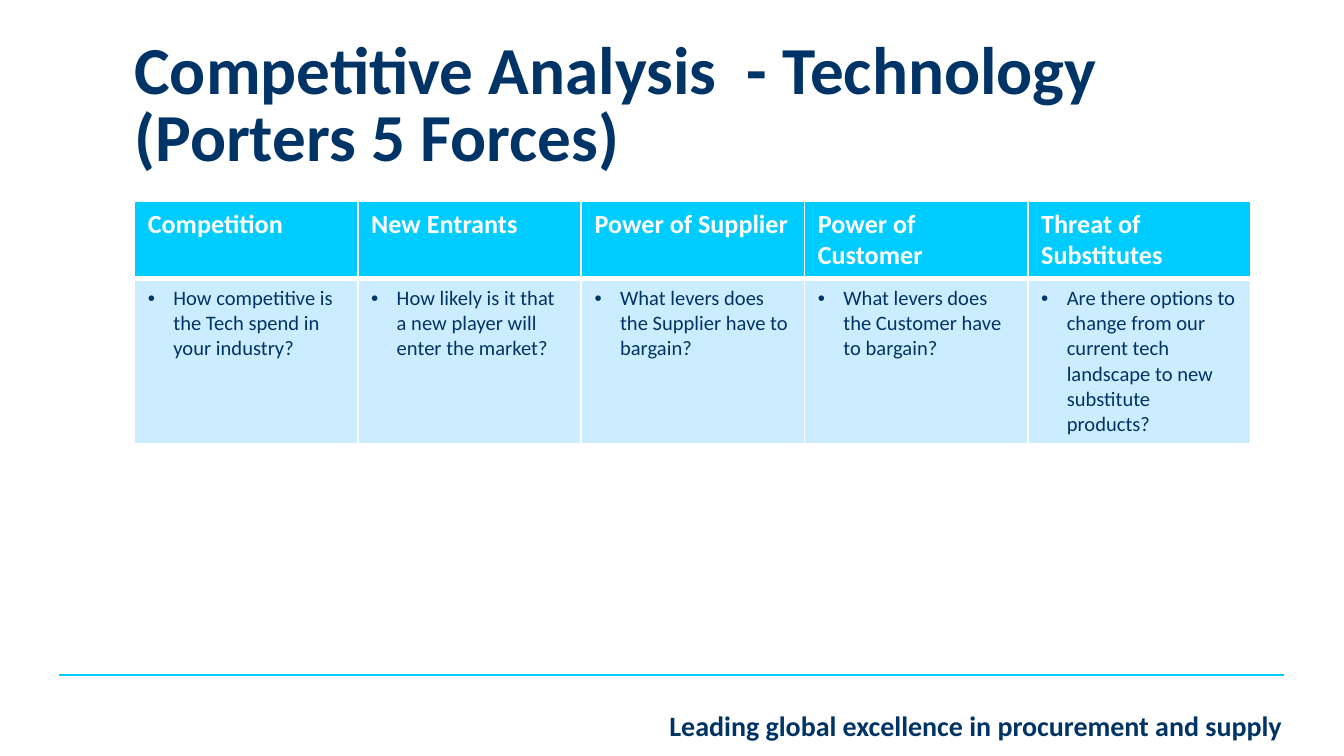
from pptx import Presentation
from pptx.dml.color import RGBColor
from pptx.enum.shapes import MSO_CONNECTOR, MSO_SHAPE
from pptx.enum.text import MSO_ANCHOR, MSO_AUTO_SIZE, PP_ALIGN
from pptx.oxml.ns import qn
from pptx.util import Inches, Pt
from lxml.etree import SubElement

NAVY = RGBColor(0x00, 0x33, 0x66)
CYAN = RGBColor(0x00, 0xCC, 0xFF)
PALE = RGBColor(0xCC, 0xEC, 0xFF)
WHITE = RGBColor(0xFF, 0xFF, 0xFF)

FORCES = [
    ("Competition", "How competitive is the Tech spend in your industry?"),
    ("New Entrants", "How likely is it that a new player will enter the market?"),
    ("Power of Supplier", "What levers does the Supplier have to bargain?"),
    ("Power of Customer", "What levers does the Customer have to bargain?"),
    ("Threat of Substitutes", "Are there options to change from our current tech "
     "landscape to new substitute products?"),
]


def write(tf, text, size, color=NAVY, bold=False, align=PP_ALIGN.LEFT, spacing=None, bullet=False):
    """Fill a text frame with one formatted paragraph."""
    tf.word_wrap = True
    p = tf.paragraphs[0]
    p.text = text
    p.alignment = align
    if spacing:
        p.line_spacing = Pt(spacing)
    if bullet:
        pPr = p._p.get_or_add_pPr()
        pPr.set("marL", str(Inches(0.19)))
        pPr.set("indent", str(-Inches(0.19)))
        SubElement(pPr, qn("a:buFont"), typeface="Arial")
        SubElement(pPr, qn("a:buChar"), char="•")
    for r in p.runs:
        r.font.name = "Calibri"
        r.font.size = Pt(size)
        r.font.bold = bold
        r.font.color.rgb = color


def add_title(s, text):
    """Place and format the title placeholder."""
    sp = s.shapes.title
    sp.left, sp.top, sp.width, sp.height = Inches(1), Inches(0.3), Inches(8.31), Inches(1.09)
    tf = sp.text_frame
    tf.margin_left = tf.margin_top = tf.margin_right = tf.margin_bottom = 0
    tf.auto_size = MSO_AUTO_SIZE.NONE
    tf.vertical_anchor = MSO_ANCHOR.TOP
    write(tf, text, 36, bold=True, spacing=36)


def add_footer(s, text):
    """Add the tagline box and the rule above it."""
    sp = s.shapes.add_shape(MSO_SHAPE.RECTANGLE, Inches(3.52), Inches(5.22), Inches(6.12), Inches(0.35))
    sp.shadow.inherit = False
    sp.fill.solid()
    sp.fill.fore_color.rgb = WHITE
    sp.line.fill.background()
    sp.text_frame.vertical_anchor = MSO_ANCHOR.MIDDLE
    write(sp.text_frame, text, 15, bold=True, align=PP_ALIGN.RIGHT)
    rule = s.shapes.add_connector(MSO_CONNECTOR.STRAIGHT, Inches(0.44), Inches(5.02), Inches(9.55), Inches(5.02))
    rule.line.color.rgb = CYAN
    rule.line.width = Pt(1)
    SubElement(rule._element.spPr, qn("a:effectLst"))


def format_cell(cell, fill, bottom):
    """Give a cell white borders and a solid fill."""
    tcPr = cell._tc.get_or_add_tcPr()
    for side, width in (("L", 1), ("R", 1), ("T", 1), ("B", bottom)):
        ln = SubElement(tcPr, qn(f"a:ln{side}"), w=str(Pt(width)))
        SubElement(SubElement(ln, qn("a:solidFill")), qn("a:srgbClr"), val=str(WHITE))
    cell.fill.solid()
    cell.fill.fore_color.rgb = fill


def add_forces_table(s):
    """Add the table with one column per force."""
    frame = s.shapes.add_table(2, len(FORCES), Inches(1), Inches(1.5), Inches(8.31), Inches(1.58))
    table = frame.table
    for row in table.rows:
        row.height = Inches(0.41)
    frame.height = Inches(1.58)
    for col, (force, question) in enumerate(FORCES):
        head, body = table.cell(0, col), table.cell(1, col)
        format_cell(head, CYAN, 3)
        write(head.text_frame, force, 14, WHITE, bold=True)
        format_cell(body, PALE, 1)
        write(body.text_frame, question, 11, bullet=True)


def main():
    """Build the slide and save it."""
    prs = Presentation()
    prs.slide_width = Inches(10)
    prs.slide_height = prs.slide_width * 9 // 16
    s = prs.slides.add_slide(prs.slide_layouts[5])
    add_footer(s, "Leading global excellence in procurement and supply")
    add_title(s, "Competitive Analysis  - Technology\n(Porters 5 Forces)")
    add_forces_table(s)
    prs.save("out.pptx")


if __name__ == "__main__":
    main()
